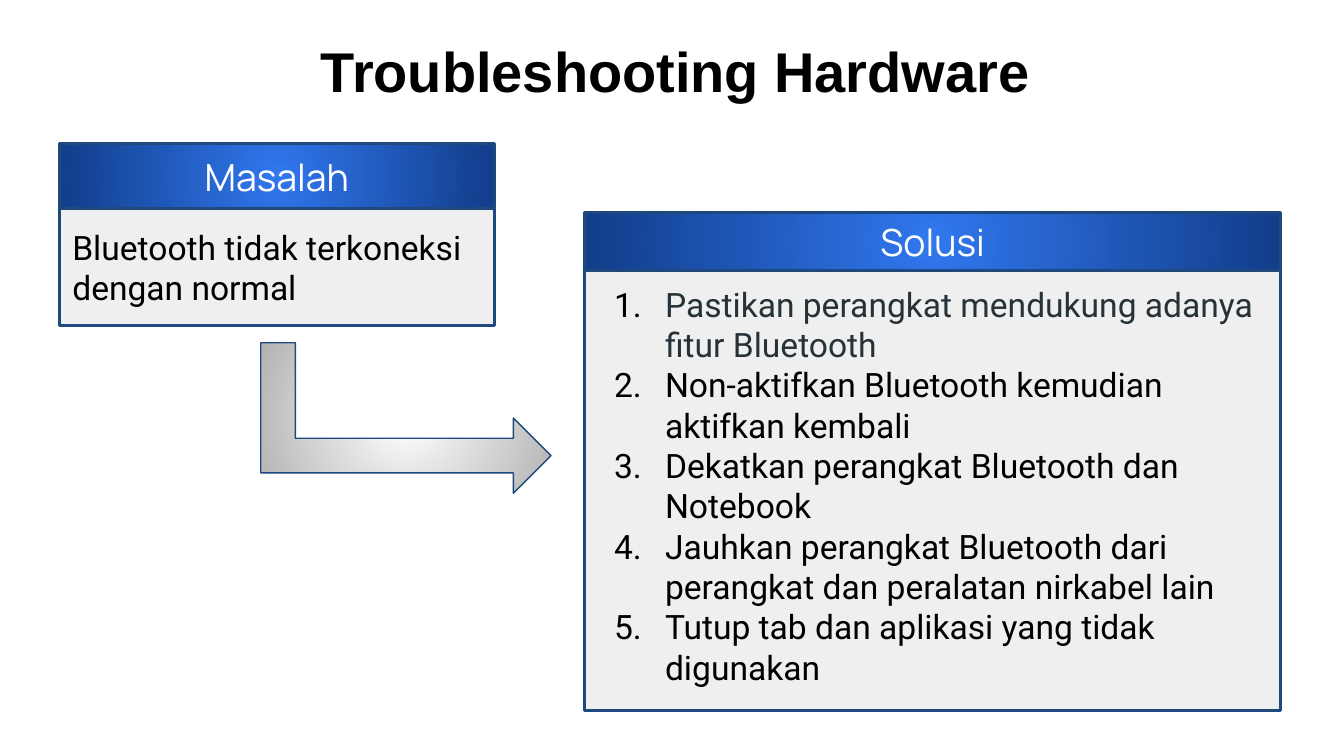
from lxml import etree
from pptx import Presentation
from pptx import util as u
from pptx.dml.color import RGBColor
from pptx.enum import shapes, text
from pptx.oxml.ns import qn

PX = u.Inches(1) // 100
COLORS = {
    "black": "000000", "white": "FFFFFF", "slate": "263238",
    "border": "1F497D", "panel": "EFEFEF",
    "bright_blue": "3177EE", "deep_blue": "113D8A", "silver": "B3B3B3",
}
SOLUTIONS = [
    "Pastikan perangkat mendukung adanya fitur Bluetooth",
    "Non-aktifkan Bluetooth kemudian aktifkan kembali",
    "Dekatkan perangkat Bluetooth dan Notebook",
    "Jauhkan perangkat Bluetooth dari perangkat dan peralatan nirkabel lain",
    "Tutup tab dan aplikasi yang tidak digunakan",
]


def color(name):
    return RGBColor.from_string(COLORS[name])


def scale(box):
    return [value * PX for value in box]


def fill_radial(shape, inner, outer):
    shape.fill.gradient()
    for stop, name in zip(shape.fill.gradient_stops, (inner, outer)):
        stop.color.rgb = color(name)
    gradient = shape._element.spPr.find(qn("a:gradFill"))
    linear = gradient.find(qn("a:lin"))
    circle = etree.Element(qn("a:path"), path="circle")
    etree.SubElement(circle, qn("a:fillToRect"),
                     {side: "50000" for side in "ltrb"})
    gradient.replace(linear, circle)


def add_outlined(parent, kind, box, width):
    shape = parent.add_shape(kind, *scale(box))
    shape.shadow.inherit = False
    shape.line.color.rgb = color("border")
    shape.line.width = u.Pt(width)
    return shape


def write(shape, lines, font, size, ink, align=text.PP_ALIGN.LEFT,
          anchor=text.MSO_ANCHOR.MIDDLE, bold=False):
    frame = shape.text_frame
    frame.word_wrap = True
    frame.vertical_anchor = anchor
    frame.margin_left = frame.margin_right = 10 * PX
    frame.margin_top = frame.margin_bottom = 10 * PX
    frame.text = "\n".join(lines)
    for paragraph in frame.paragraphs:
        paragraph.alignment = align
        for run in paragraph.runs:
            run.font.name = font
            run.font.size = u.Pt(size)
            run.font.bold = bold
            run.font.color.rgb = color(ink)


def number(paragraph):
    properties = paragraph._p.get_or_add_pPr()
    properties.set("marL", str(50 * PX))
    properties.set("indent", str(-38 * PX))
    bullet_color = etree.SubElement(properties, qn("a:buClr"))
    etree.SubElement(bullet_color, qn("a:srgbClr"), val=COLORS["black"])
    etree.SubElement(properties, qn("a:buFont"), typeface="Roboto")
    etree.SubElement(properties, qn("a:buAutoNum"), type="arabicPeriod")


def add_card(slide, box, header_height, heading, lines, anchor):
    left, top, width, height = box
    group = slide.shapes.add_group_shape().shapes
    rectangle = shapes.MSO_SHAPE.RECTANGLE
    header = add_outlined(group, rectangle, (left, top, width, header_height), 1.5)
    fill_radial(header, "bright_blue", "deep_blue")
    write(header, [heading], "Manrope", 20, "white", text.PP_ALIGN.CENTER)
    body_box = (left, top + header_height, width, height - header_height)
    body = add_outlined(group, rectangle, body_box, 1.5)
    body.fill.solid()
    body.fill.fore_color.rgb = color("panel")
    write(body, lines, "Roboto", 18, "black", anchor=anchor)
    return body


def add_title(slide, box, title):
    write(slide.shapes.add_textbox(*scale(box)), [title], "Arial", 30, "black",
          bold=True)


def add_bent_arrow(slide, box):
    arrow = add_outlined(slide.shapes, shapes.MSO_SHAPE.BENT_UP_ARROW, box, 0.75)
    arrow.rotation = 90
    arrow.adjustments[0] = 0.23
    fill_radial(arrow, "white", "silver")


def main():
    presentation = Presentation()
    presentation.slide_width = 1000 * PX
    presentation.slide_height = presentation.slide_width * 9 // 16
    slide = presentation.slides.add_slide(presentation.slide_layouts[6])

    solution = add_card(slide, (435, 158, 518, 371), 43, "Solusi", SOLUTIONS,
                        text.MSO_ANCHOR.TOP)
    paragraphs = solution.text_frame.paragraphs
    for paragraph in paragraphs:
        number(paragraph)
    paragraphs[0].runs[0].font.color.rgb = color("slate")

    add_title(slide, (229, 24, 656, 57), "Troubleshooting Hardware")
    add_card(slide, (44, 107, 324, 135), 48, "Masalah",
             ["Bluetooth tidak terkoneksi dengan normal"],
             text.MSO_ANCHOR.MIDDLE)
    add_bent_arrow(slide, (246, 203, 112, 216))

    presentation.save("out.pptx")


if __name__ == "__main__":
    main()
